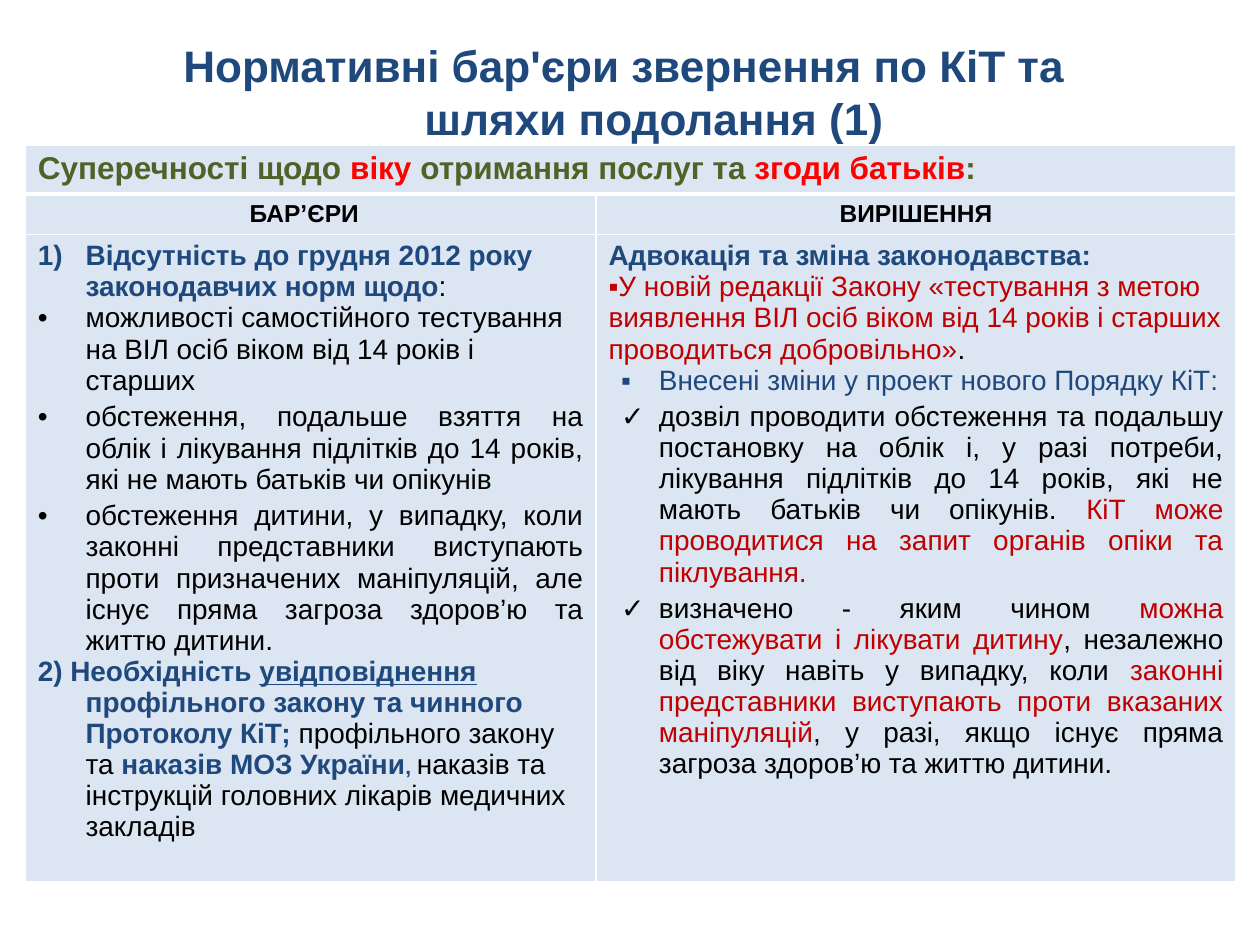
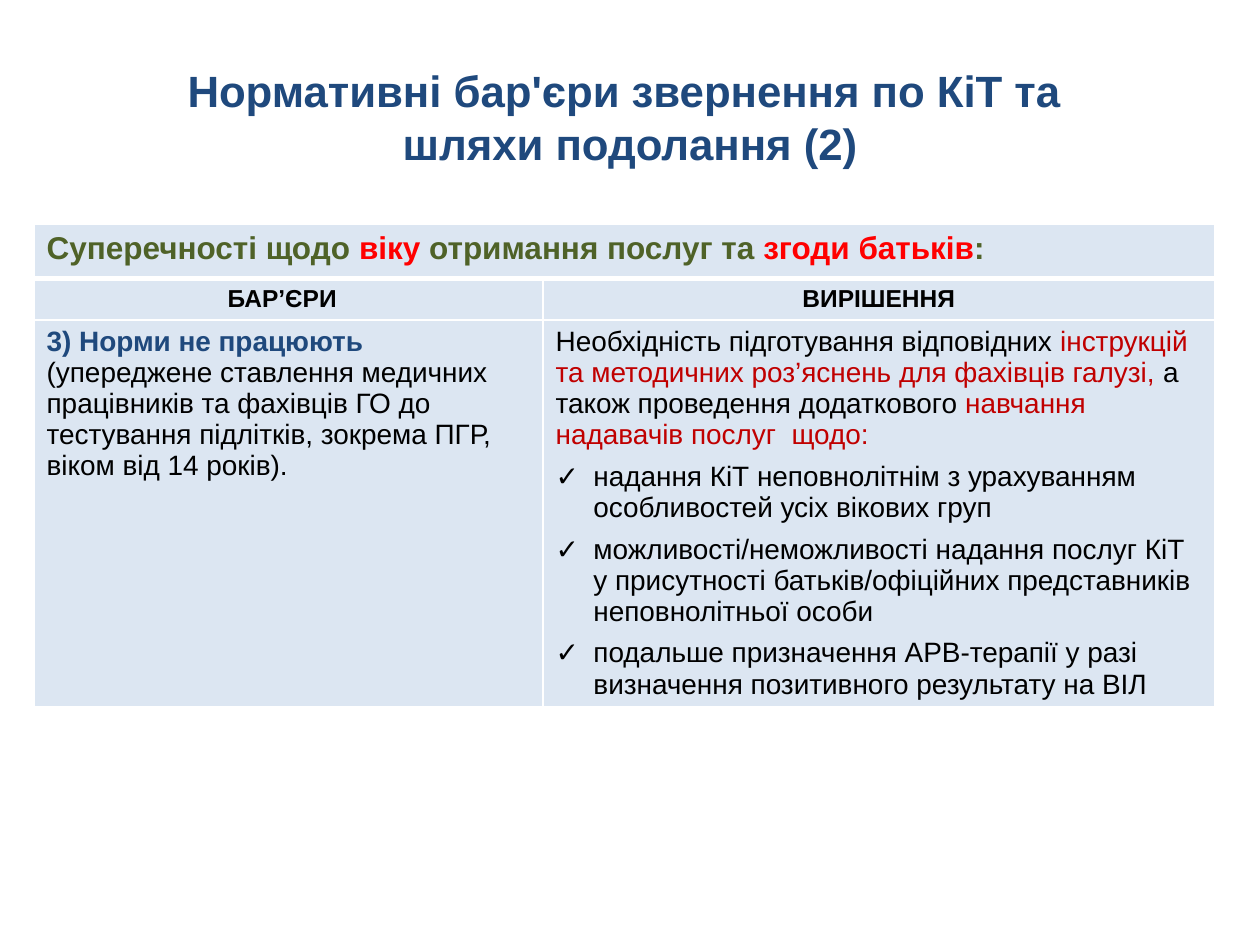
from copy import deepcopy

from lxml.etree import SubElement
from pptx import Presentation
from pptx.dml.color import RGBColor
from pptx.enum.text import MSO_ANCHOR, MSO_AUTO_SIZE, PP_ALIGN
from pptx.oxml.ns import qn
from pptx.util import Inches, Pt

FONT = "Arial"
COLORS = {
    "blue": "1F497D",
    "green": "4F6228",
    "red": "FF0000",
    "crimson": "C00000",
    "black": "000000",
    "cell": "DCE6F2",
    "border": "FFFFFF",
}

RUN_STYLES = {
    "topic": {"color": "green", "size": 18, "bold": True},
    "alert": {"color": "red", "size": 18, "bold": True},
    "header": {"color": "black", "size": 14, "bold": True},
    "body": {"color": "black", "size": 16},
    "strong": {"color": "blue", "size": 16, "bold": True},
    "underlined": {"color": "blue", "size": 16, "bold": True, "underline": True},
    "small": {"color": "blue", "size": 12, "bold": True},
    "blue": {"color": "blue", "size": 16},
    "crimson": {"color": "crimson", "size": 16},
}

PARAGRAPH_STYLES = {
    "plain": {},
    "centered": {"align": PP_ALIGN.CENTER},
    "hanging": {"left": 0.38, "hang": 0.38},
    "numbered": {"left": 0.38, "hang": 0.38, "number": "arabicParenR"},
    "dot": {"left": 0.38, "hang": 0.38, "bullet": "•"},
    "dot justified": {"left": 0.38, "hang": 0.38, "bullet": "•", "before": 3.2, "align": PP_ALIGN.JUSTIFY},
    "square": {"bullet": "▪"},
    "square justified": {"left": 0.4, "hang": 0.3, "bullet": "▪", "after": 3, "align": PP_ALIGN.JUSTIFY},
    "check justified": {"left": 0.4, "hang": 0.3, "bullet": "✓", "after": 3, "align": PP_ALIGN.JUSTIFY},
    "check": {"left": 0.3, "hang": 0.3, "bullet": "✓", "before": 6},
}

TITLE_LINES = ("Нормативні бар'єри звернення по КіТ та ", "шляхи подолання ({})")
TOPIC = [("plain", [
    ("Суперечності щодо ", "topic"), ("віку", "alert"),
    (" отримання послуг та ", "topic"), ("згоди батьків", "alert"), (":", "topic"),
])]
BARRIERS_HEADER = [("centered", [("БАР’ЄРИ", "header")])]
SOLUTIONS_HEADER = [("centered", [("ВИРІШЕННЯ", "header")])]

SLIDES = [
    {
        "title_height": 0.85, "title_size": 25.2, "title_hang": 0.38, "title_before": 5,
        "table_position": (0.2, 1.15), "columns": (4.53, 5.08), "rows": (0.39, 0.32, 5.14),
        "barriers": [
            ("numbered", [("Відсутність до грудня 2012 року законодавчих норм щодо", "strong"), (":", "body")]),
            ("dot", [("можливості самостійного тестування на ВІЛ осіб віком від 14 років і старших", "body")]),
            ("dot justified", [("обстеження, подальше взяття на облік і лікування підлітків до 14 років, "
                                "які не мають батьків чи опікунів", "body")]),
            ("dot justified", [("обстеження дитини, у випадку, коли законні представники виступають проти "
                                "призначених маніпуляцій, але існує пряма загроза здоров’ю та життю дитини.", "body")]),
            ("hanging", [
                ("2) Необхідність ", "strong"), ("увідповіднення ", "underlined"),
                ("профільного закону та чинного Протоколу КіТ; ", "strong"),
                ("профільного закону та ", "body"), ("наказів МОЗ України", "strong"), (", ", "small"),
                ("наказів та інструкцій головних лікарів медичних закладів", "body"),
            ]),
        ],
        "solutions": [
            ("plain", [("Адвокація та зміна законодавства:", "strong")]),
            ("square", [("У новій редакції Закону «тестування з метою виявлення ВІЛ осіб віком від 14 років "
                         "і старших проводиться добровільно»", "crimson"), (".", "body")]),
            ("square justified", [("Внесені зміни у проект нового Порядку КіТ:", "blue")]),
            ("check justified", [
                ("дозвіл проводити обстеження та подальшу постановку на облік і, у разі потреби, "
                 "лікування підлітків до 14 років, які не мають батьків чи опікунів. ", "body"),
                ("КіТ може проводитися на запит органів опіки та піклування.", "crimson"),
            ]),
            ("check justified", [
                ("визначено - яким чином ", "body"), ("можна обстежувати і лікувати дитину", "crimson"),
                (", незалежно від віку навіть у випадку, коли ", "body"),
                ("законні представники виступають проти вказаних маніпуляцій", "crimson"),
                (", у разі, якщо існує пряма загроза здоров’ю та життю дитини.", "body"),
            ]),
        ],
    },
    {
        "title_height": 1.25, "title_size": 25, "title_hang": 0, "title_before": 0,
        "table_position": (0.27, 1.78), "columns": (4.04, 5.33), "rows": (0.43, 0.33, 2.99),
        "barriers": [
            ("plain", [("3) Норми не працюють", "strong")]),
            ("plain", [("(упереджене ставлення медичних працівників та фахівців ГО до тестування підлітків, "
                        "зокрема ПГР, віком від 14 років).", "body")]),
        ],
        "solutions": [
            ("plain", [
                ("Необхідність підготування відповідних ", "body"),
                ("інструкцій та методичних роз’яснень для фахівців галузі, ", "crimson"),
                ("а також проведення додаткового ", "body"), ("навчання надавачів послуг  щодо:", "crimson"),
            ]),
            ("check", [("надання КіТ неповнолітнім з урахуванням особливостей усіх вікових груп", "body")]),
            ("check", [("можливості/неможливості надання послуг КіТ у присутності батьків/офіційних "
                        "представників неповнолітньої особи", "body")]),
            ("check", [("подальше призначення АРВ-терапії у разі визначення позитивного результату на ВІЛ", "body")]),
        ],
    },
]


def format_run(run, color, size, bold=False, underline=False):
    run.font.name = FONT
    run.font.size = Pt(size)
    run.font.bold = bold
    run.font.underline = underline
    run.font.color.rgb = RGBColor.from_string(COLORS[color])


def format_paragraph(paragraph, align=PP_ALIGN.LEFT, left=0, hang=0, before=0, after=0, bullet=None, number=None):
    paragraph.alignment = align
    paragraph.space_before = Pt(before)
    paragraph.space_after = Pt(after)
    properties = paragraph._p.get_or_add_pPr()
    properties.set("marL", str(Inches(left)))
    properties.set("indent", str(-Inches(hang)))
    if bullet:
        SubElement(properties, qn("a:buFont"), typeface=FONT)
        SubElement(properties, qn("a:buChar"), char=bullet)
    elif number:
        SubElement(properties, qn("a:buFont"), typeface=FONT)
        SubElement(properties, qn("a:buAutoNum"), type=number)
    else:
        SubElement(properties, qn("a:buNone"))


def add_title(slide, number, content):
    title = slide.shapes.title
    title.left, title.top = Inches(0.5), Inches(0.3)
    title.width, title.height = Inches(9), Inches(content["title_height"])
    text_frame = title.text_frame
    text_frame.text = "\v".join(TITLE_LINES).format(number)
    text_frame.auto_size = MSO_AUTO_SIZE.NONE
    text_frame.vertical_anchor = MSO_ANCHOR.MIDDLE
    paragraph = text_frame.paragraphs[0]
    hang = content["title_hang"]
    format_paragraph(paragraph, PP_ALIGN.CENTER, hang, hang, content["title_before"])
    for run in paragraph.runs:
        format_run(run, "blue", content["title_size"], bold=True)
    for line_break in paragraph._p.findall(qn("a:br")):
        line_break.insert(0, deepcopy(paragraph.runs[0]._r.rPr))


def set_borders(cell, top, bottom):
    properties = cell._tc.get_or_add_tcPr()
    for index, (side, width) in enumerate((("L", 1), ("R", 1), ("T", top), ("B", bottom))):
        line = SubElement(properties, qn(f"a:ln{side}"), w=str(Pt(width)))
        fill = SubElement(line, qn("a:solidFill"))
        SubElement(fill, qn("a:srgbClr"), val=COLORS["border"])
        properties.insert(index, line)


def fill_cell(cell, paragraphs):
    text_frame = cell.text_frame
    for index, (paragraph_style, runs) in enumerate(paragraphs):
        paragraph = text_frame.add_paragraph() if index else text_frame.paragraphs[0]
        format_paragraph(paragraph, **PARAGRAPH_STYLES[paragraph_style])
        for text, run_style in runs:
            run = paragraph.add_run()
            run.text = text
            format_run(run, **RUN_STYLES[run_style])


def add_barrier_table(slide, content):
    columns, rows = content["columns"], content["rows"]
    left, top = content["table_position"]
    table = slide.shapes.add_table(
        len(rows), len(columns), Inches(left), Inches(top), Inches(sum(columns)), Inches(sum(rows))
    ).table
    table.first_row = table.horz_banding = False
    for column, width in zip(table.columns, columns):
        column.width = Inches(width)
    for row_index, (row, height) in enumerate(zip(table.rows, rows)):
        row.height = Inches(height)
        for cell in row.cells:
            cell.fill.solid()
            cell.fill.fore_color.rgb = RGBColor.from_string(COLORS["cell"])
            set_borders(cell, top=3 if row_index == 1 else 1, bottom=3 if row_index == 0 else 1)
    table.cell(0, 0).merge(table.cell(0, 1))
    fill_cell(table.cell(0, 0), TOPIC)
    for column_index, (header, body) in enumerate((
        (BARRIERS_HEADER, content["barriers"]), (SOLUTIONS_HEADER, content["solutions"])
    )):
        fill_cell(table.cell(1, column_index), header)
        fill_cell(table.cell(2, column_index), body)
    table.cell(1, 0).margin_right = Inches(0.2)


def main():
    presentation = Presentation()
    presentation.slide_width, presentation.slide_height = Inches(10), Inches(7.5)
    for number, content in enumerate(SLIDES, 1):
        slide = presentation.slides.add_slide(presentation.slide_layouts[5])
        add_title(slide, number, content)
        add_barrier_table(slide, content)
    presentation.save("out.pptx")


if __name__ == "__main__":
    main()
